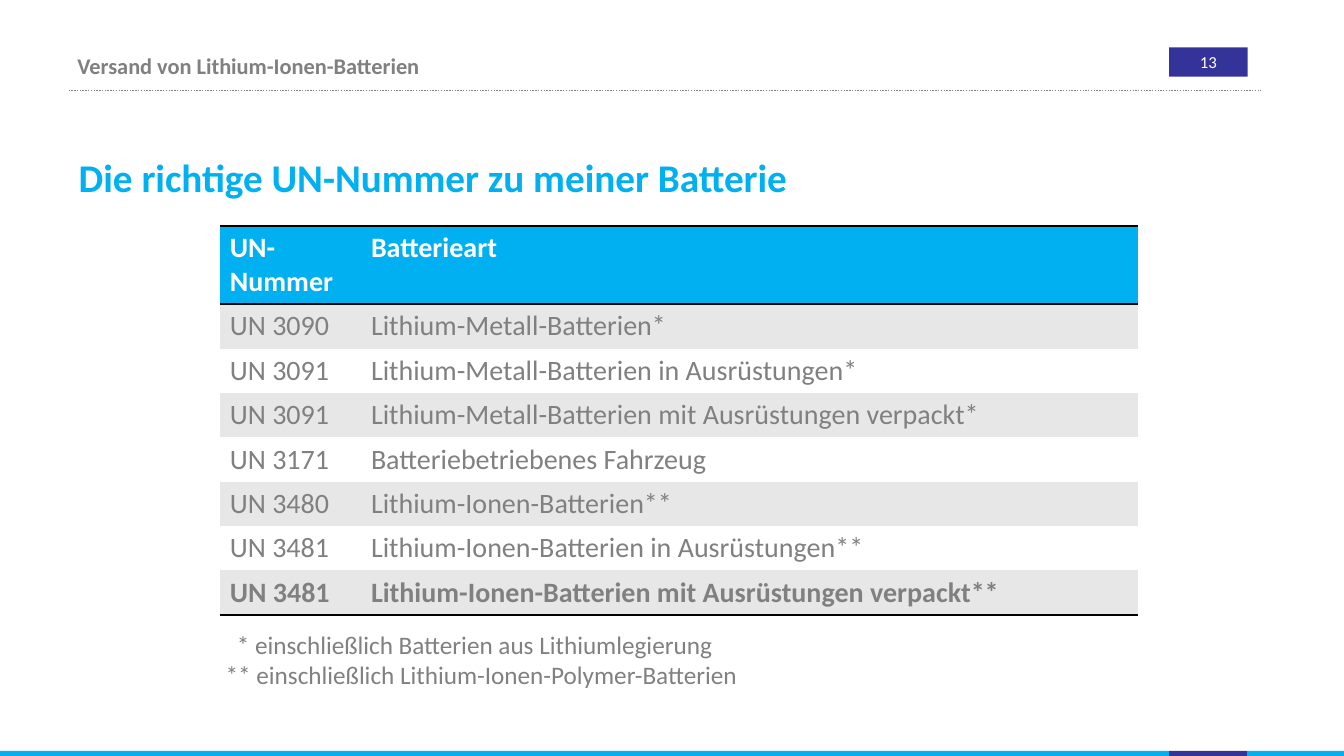
from lxml import etree
from pptx import Presentation
from pptx.dml.color import RGBColor
from pptx.enum.dml import MSO_LINE
from pptx.enum.shapes import MSO_CONNECTOR, MSO_SHAPE
from pptx.enum.text import MSO_ANCHOR, PP_ALIGN
from pptx.oxml.ns import qn
from pptx.util import Pt

RECT = MSO_SHAPE.RECTANGLE
STRAIGHT = MSO_CONNECTOR.STRAIGHT
DOTTED = MSO_LINE.ROUND_DOT
TOP, MIDDLE = MSO_ANCHOR.TOP, MSO_ANCHOR.MIDDLE
LEFT, CENTER = PP_ALIGN.LEFT, PP_ALIGN.CENTER

# Content
HEADER = "Versand von Lithium-Ionen-Batterien"
PAGE = "13"
TITLE = "Die richtige UN-Nummer zu meiner Batterie"
ROWS = [
    ("UN-Nummer", "Batterieart"),
    ("UN 3090", "Lithium-Metall-Batterien*"),
    ("UN 3091", "Lithium-Metall-Batterien in Ausrüstungen*"),
    ("UN 3091", "Lithium-Metall-Batterien mit Ausrüstungen verpackt*"),
    ("UN 3171", "Batteriebetriebenes Fahrzeug"),
    ("UN 3480", "Lithium-Ionen-Batterien**"),
    ("UN 3481", "Lithium-Ionen-Batterien in Ausrüstungen**"),
    ("UN 3481", "Lithium-Ionen-Batterien mit Ausrüstungen verpackt**"),
]
# Footnotes with their left indent
NOTES = [
    ("* einschließlich Batterien aus Lithiumlegierung", 8),
    ("** einschließlich Lithium-Ionen-Polymer-Batterien", 0),
]

# Style and measures in points
FONT = "Calibri"
COLORS = {"cyan": "00B0F0", "navy": "333399", "gray": "808080",
          "band": "E7E7E7", "white": "FFFFFF", "black": "000000"}
WIDTH, HEIGHT = 960, 540
BADGE_LEFT, BADGE_WIDTH = 835.2, 56
FOOTER_TOP = 536.4
COLUMNS = (100.8, 555.4)
HEAD_HEIGHT, ROW_HEIGHT = 56, 31.7
NO_STYLE = "{2D5ABB26-0587-4C30-8999-92F81FD0307C}"


def rgb(name):
    return RGBColor.from_string(COLORS[name])


def add_run(p, text, size, color, bold=False):
    r = p.add_run()
    r.text = text
    r.font.name, r.font.size, r.font.bold = FONT, Pt(size), bold
    r.font.color.rgb = rgb(color)


def add_bar(left, top, width, height, color):
    s = slide.shapes.add_shape(RECT, Pt(left), Pt(top), Pt(width), Pt(height))
    s.shadow.inherit = False
    s.fill.solid()
    s.fill.fore_color.rgb = rgb(color)
    s.line.fill.background()
    return s


def add_text_box(left, top, width, height, wrap):
    s = slide.shapes.add_textbox(Pt(left), Pt(top), Pt(width), Pt(height))
    s.text_frame.word_wrap = wrap
    return s.text_frame


def add_border(cell, side):
    ln = etree.SubElement(cell._tc.get_or_add_tcPr(), qn("a:" + side), w=str(Pt(2)))
    fill = etree.SubElement(ln, qn("a:solidFill"))
    etree.SubElement(fill, qn("a:srgbClr"), val=COLORS["black"])


prs = Presentation()
prs.slide_width, prs.slide_height = Pt(WIDTH), Pt(HEIGHT)
slide = prs.slides.add_slide(prs.slide_layouts[5])

# Running header, page number and dotted rule
tf = add_text_box(48.2, 33.8, 780, 26.6, True)
add_run(tf.paragraphs[0], HEADER, 16, "gray", True)

badge = add_bar(BADGE_LEFT, 33.8, BADGE_WIDTH, 20.9, "navy")
tf = badge.text_frame
tf.margin_top = tf.margin_bottom = 0
tf.vertical_anchor = MIDDLE
p = tf.paragraphs[0]
p.alignment = CENTER
add_run(p, PAGE, 12, "white")

rule = slide.shapes.add_connector(STRAIGHT, Pt(49), Pt(64.8), Pt(900.7), Pt(64.8))
rule.line.color.rgb = rgb("gray")
rule.line.width = Pt(1)
rule.line.dash_style = DOTTED
etree.SubElement(rule._element.spPr, qn("a:effectLst"))

# Footer strip, split below the page number
edges = (0, BADGE_LEFT, BADGE_LEFT + BADGE_WIDTH, WIDTH)
for left, right, color in zip(edges, edges[1:], ("cyan", "navy", "cyan")):
    add_bar(left, FOOTER_TOP, right - left, HEIGHT - FOOTER_TOP, color)

# Title
title = slide.shapes.title
title.left, title.top, title.width, title.height = Pt(56.2), Pt(105.8), Pt(835), Pt(34)
tf = title.text_frame
tf.word_wrap = True
tf.vertical_anchor = TOP
tf.margin_left = 0
p = tf.paragraphs[0]
p.alignment = LEFT
add_run(p, TITLE, 28, "cyan", True)

# Table of UN numbers
last = len(ROWS) - 1
frame = slide.shapes.add_table(len(ROWS), len(COLUMNS), Pt(157), Pt(161.3),
                               Pt(sum(COLUMNS)), Pt(HEAD_HEIGHT + last * ROW_HEIGHT))
table = frame.table
table._tbl.tblPr.find(qn("a:tableStyleId")).text = NO_STYLE
for column, width in zip(table.columns, COLUMNS):
    column.width = Pt(width)
for i, row in enumerate(ROWS):
    head = i == 0
    table.rows[i].height = Pt(HEAD_HEIGHT if head else ROW_HEIGHT)
    fill = "cyan" if head else "band" if i % 2 else "white"
    for j, text in enumerate(row):
        cell = table.cell(i, j)
        if head:
            add_border(cell, "lnT")
        if i in (0, last):
            add_border(cell, "lnB")
        cell.fill.solid()
        cell.fill.fore_color.rgb = rgb(fill)
        add_run(cell.text_frame.paragraphs[0], text, 20,
                "white" if head else "gray", i in (0, last))

# Footnotes
tf = add_text_box(154.1, 445.7, 385.2, 51, False)
for i, (text, indent) in enumerate(NOTES):
    p = tf.add_paragraph() if i else tf.paragraphs[0]
    pPr = p._p.get_or_add_pPr()
    pPr.set("marL", str(Pt(indent)))
    pPr.set("indent", "0")
    add_run(p, text, 18, "gray")

prs.save("out.pptx")
